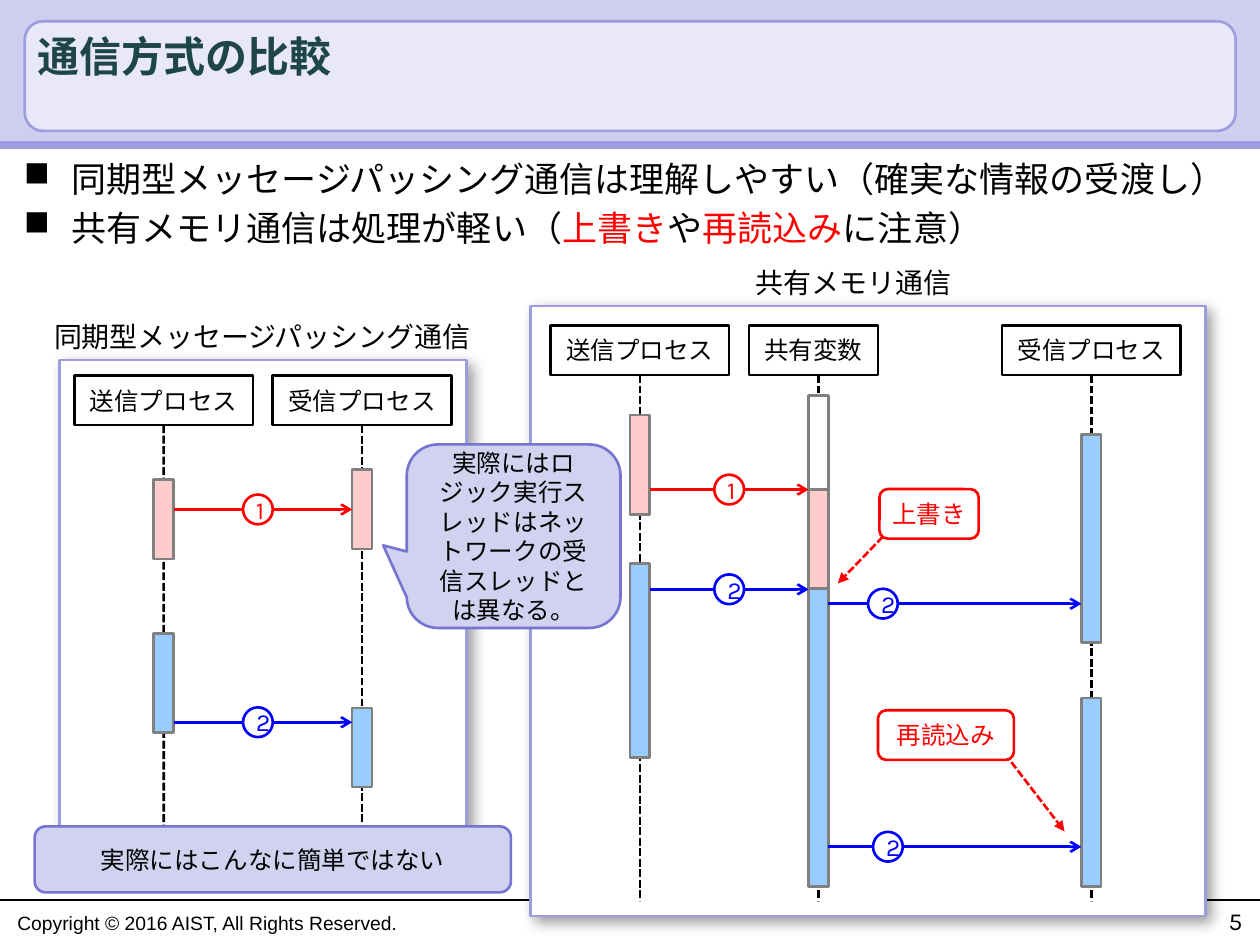
from dataclasses import dataclass

from lxml import etree
from pptx import Presentation
from pptx import util as u
from pptx.dml.color import RGBColor
from pptx.enum import dml, shapes, text
from pptx.oxml import ns


@dataclass(frozen=True)
class Theme:
    font: str = "Karla"
    footer_font: str = "Arial"
    black: str = "000000"
    white: str = "FFFFFF"
    red: str = "FF0000"
    blue: str = "0000FF"
    gray: str = "808080"
    pink: str = "FFCCCC"
    sky: str = "99CCFF"
    title: str = "1E4649"
    band: str = "CECEEF"
    plate: str = "E8E8F8"
    violet: str = "9C9CDF"
    note: str = "D1D1F0"
    note_edge: str = "7575D1"
    title_size: float = 24
    body_size: float = 20
    caption_size: float = 16
    label_size: float = 14
    footer_size: float = 11
    stroke: float = 1.5


T = Theme()
KIND = shapes.MSO_SHAPE
ALIGN = text.PP_ALIGN
ANCHOR = text.MSO_ANCHOR
BAR_WIDTH = 0.4
HEADER_HEIGHT = 1.0
MARKER_SIZE = 0.6


def rgb(color):
    return RGBColor.from_string(color)


def add_child(parent, tag, **attributes):
    return etree.SubElement(parent, ns.qn(tag), attributes)


def add_run(paragraph, words, size, color=T.black, font=T.font, bold=False):
    run = paragraph.add_run()
    run.text = words
    run.font.size, run.font.name, run.font.bold = u.Pt(size), font, bold
    run.font.color.rgb = rgb(color)


def add_text(canvas, area, words, size, color=T.black, font=T.font, bold=False,
             align=ALIGN.LEFT, anchor=ANCHOR.TOP, wrap=True):
    frame = canvas.add_textbox(*map(u.Cm, area)).text_frame
    frame.word_wrap, frame.vertical_anchor = wrap, anchor
    frame.paragraphs[0].alignment = align
    add_run(frame.paragraphs[0], words, size, color, font, bold)


def add_box(canvas, kind, area, fill, edge=None, label="", color=T.black,
            wrap=True, adjust=()):
    box = canvas.add_shape(kind, *map(u.Cm, area))
    box.shadow.inherit = False
    box.fill.solid()
    box.fill.fore_color.rgb = rgb(fill)
    if edge:
        box.line.color.rgb, box.line.width = rgb(edge), u.Pt(T.stroke)
    else:
        box.line.fill.background()
    for index, value in enumerate(adjust):
        box.adjustments[index] = value
    if label:
        frame = box.text_frame
        frame.word_wrap, frame.vertical_anchor = wrap, ANCHOR.MIDDLE
        frame.paragraphs[0].alignment = ALIGN.CENTER
        add_run(frame.paragraphs[0], label, T.label_size, color)
    return box


def add_line(canvas, start, end, color=T.black, width=T.stroke, dashed=False, head=None):
    line = canvas.add_connector(shapes.MSO_CONNECTOR.STRAIGHT, *map(u.Cm, start + end))
    line.line.color.rgb, line.line.width = rgb(color), u.Pt(width)
    if dashed:
        line.line.dash_style = dml.MSO_LINE.SQUARE_DOT
    if head:
        add_child(line.line._get_or_add_ln(), "a:tailEnd", type=head)
    add_child(line._element.spPr, "a:effectLst")
    return line


def add_panel(canvas, area):
    """White framed panel with a soft shadow to the lower right."""
    panel = add_box(canvas, KIND.RECTANGLE, area, T.white, T.violet)
    effects = panel._element.spPr.find(ns.qn("a:effectLst"))
    shadow = add_child(effects, "a:outerShdw", blurRad=str(u.Pt(8)), dist=str(u.Pt(4)),
                       dir="2700000", algn="tl", rotWithShape="0")
    add_child(add_child(shadow, "a:srgbClr", val=T.black), "a:alpha", val="40000")


def add_header(canvas, name, center, top, width=3.6):
    area = (center - width / 2, top, width, HEADER_HEIGHT)
    return add_box(canvas, KIND.ROUNDED_RECTANGLE, area, T.white, T.black, name,
                   wrap=False, adjust=[0])


def add_lifeline(canvas, center, top, bottom, header=None):
    line = add_line(canvas, (center, top), (center, bottom), dashed=True)
    if header:
        line.begin_connect(header, 2)


def add_bar(canvas, center, top, height, fill):
    area = (center - BAR_WIDTH / 2, top, BAR_WIDTH, height)
    return add_box(canvas, KIND.RECTANGLE, area, fill, T.gray)


def add_message(canvas, sender, receiver, y, marker_x, number, color):
    """Arrow between the bars of two lifelines, with a numbered marker on it."""
    arrow = add_line(canvas, (sender + BAR_WIDTH / 2, y), (receiver - BAR_WIDTH / 2, y),
                     color, head="arrow")
    area = (marker_x - MARKER_SIZE / 2, y - MARKER_SIZE / 2, MARKER_SIZE, MARKER_SIZE)
    add_box(canvas, KIND.OVAL, area, T.white, color, number, color)
    return arrow


def add_warning(canvas, label, area, start, end):
    add_line(canvas, start, end, T.red, dashed=True, head="triangle")
    add_box(canvas, KIND.ROUNDED_RECTANGLE, area, T.white, T.red, label, T.red, wrap=False)


def add_frame(canvas):
    """Title band and footer."""
    add_line(canvas, (0, 18.14), (25.4, 18.14), width=0.75)
    add_text(canvas, (0.1, 18.24, 8.53, 0.74), "Copyright © 2016 AIST, All Rights Reserved.",
             T.footer_size, font=T.footer_font, wrap=False)
    add_box(canvas, KIND.RECTANGLE, (0, 0, 25.4, 2.92), T.band)
    add_box(canvas, KIND.ROUNDED_RECTANGLE, (0.5, 0.43, 24.41, 2.21), T.plate, T.violet)
    add_line(canvas, (0, 2.92), (25.4, 2.92), T.violet, 4.5)
    add_text(canvas, (0.5, 0.53, 24.41, 1.2), "通信方式の比較", T.title_size, T.title,
             bold=True, anchor=ANCHOR.MIDDLE)
    add_text(canvas, (19.38, 18.14, 5.92, 0.79), "5", T.label_size, align=ALIGN.RIGHT)


def add_points(canvas, area, points):
    frame = canvas.add_textbox(*map(u.Cm, area)).text_frame
    frame.word_wrap = True
    for index, spans in enumerate(points):
        paragraph = frame.add_paragraph() if index else frame.paragraphs[0]
        properties = paragraph._p.get_or_add_pPr()
        properties.set("marL", str(u.Cm(0.96)))
        properties.set("indent", str(u.Cm(-0.96)))
        add_child(properties, "a:buChar", char="■")
        if index:
            paragraph.space_before = u.Pt(T.body_size * 0.2)
        for words, color in spans:
            add_run(paragraph, words, T.body_size, color)


def add_message_passing(canvas):
    sender, receiver, top, bottom = 3.3, 7.3, 7.57, 16.76
    add_panel(canvas, (1.2, 7.26, 8.2, 10))
    for name, center in (("送信プロセス", sender), ("受信プロセス", receiver)):
        header = add_header(canvas, name, center, top)
        add_lifeline(canvas, center, top + HEADER_HEIGHT, bottom, header)
    add_bar(canvas, sender, 9.67, 1.6, T.pink)
    received = add_bar(canvas, receiver, 9.47, 1.6, T.pink)
    add_bar(canvas, sender, 12.77, 2, T.sky)
    add_bar(canvas, receiver, 14.27, 1.6, T.sky)
    add_message(canvas, sender, receiver, 10.27, 5.2, "1", T.red).end_connect(received, 1)
    add_message(canvas, sender, receiver, 14.56, 5.2, "2", T.blue)
    add_text(canvas, (0.84, 6.32, 9.07, 0.94), "同期型メッセージパッシング通信",
             T.caption_size, wrap=False)


def add_shared_memory(canvas):
    sender, shared, receiver, top, bottom = 12.9, 16.5, 22, 6.56, 18.16
    add_panel(canvas, (10.7, 6.17, 13.6, 12.3))
    for name, center in (("送信プロセス", sender), ("受信プロセス", receiver)):
        header = add_header(canvas, name, center, top)
        add_lifeline(canvas, center, top + HEADER_HEIGHT, bottom, header)
    add_header(canvas, "共有変数", 16.4, top, 2.6)
    add_lifeline(canvas, shared, top + HEADER_HEIGHT, bottom)
    for center, start, height, fill in (
            (shared, 7.97, 9.9, T.white), (shared, 9.87, 2, T.pink), (shared, 11.87, 6, T.sky),
            (sender, 8.37, 2, T.pink), (sender, 11.36, 3.91, T.sky),
            (receiver, 8.76, 4.2, T.sky), (receiver, 14.07, 3.8, T.sky)):
        add_bar(canvas, center, start, height, fill)
    add_message(canvas, sender, shared, 9.87, 14.7, "1", T.red)
    add_message(canvas, sender, shared, 11.88, 14.7, "2", T.blue)
    add_message(canvas, shared, receiver, 12.17, 17.8, "2", T.blue)
    add_message(canvas, shared, receiver, 17.07, 17.9, "2", T.blue)
    add_text(canvas, (14.99, 5.23, 4.5, 0.94), "共有メモリ通信", T.caption_size, wrap=False)
    add_warning(canvas, "再読込み", (17.7, 14.32, 2.74, 1), (20, 14.86), (21.46, 16.76))
    add_warning(canvas, "上書き", (17.73, 9.86, 2, 1), (18.24, 10.36), (16.89, 11.76))


def main():
    deck = Presentation()
    deck.slide_width, deck.slide_height = u.Cm(25.4), u.Cm(19.05)
    canvas = deck.slides.add_slide(deck.slide_layouts[6]).shapes
    add_frame(canvas)
    add_points(canvas, (0.23, 3.05, 24.87, 2.26), [
        [("同期型メッセージパッシング通信は理解しやすい（確実な情報の受渡し）", T.black)],
        [("共有メモリ通信は処理が軽い（", T.black), ("上書き", T.red), ("や", T.black),
         ("再読込み", T.red), ("に注意）", T.black)]])
    add_message_passing(canvas)
    add_shared_memory(canvas.add_group_shape().shapes)
    add_box(canvas, KIND.ROUNDED_RECTANGLE, (0.7, 16.66, 9.6, 1.33), T.note, T.note_edge,
            "実際にはこんなに簡単ではない")
    add_box(canvas, KIND.ROUNDED_RECTANGULAR_CALLOUT, (8.2, 8.96, 4.31, 3.7), T.note,
            T.note_edge, "実際にはロジック実行スレッドはネットワークの受信スレッドとは異なる。",
            adjust=[-0.61, 0.05, 0.17])
    deck.save("out.pptx")


if __name__ == "__main__":
    main()
